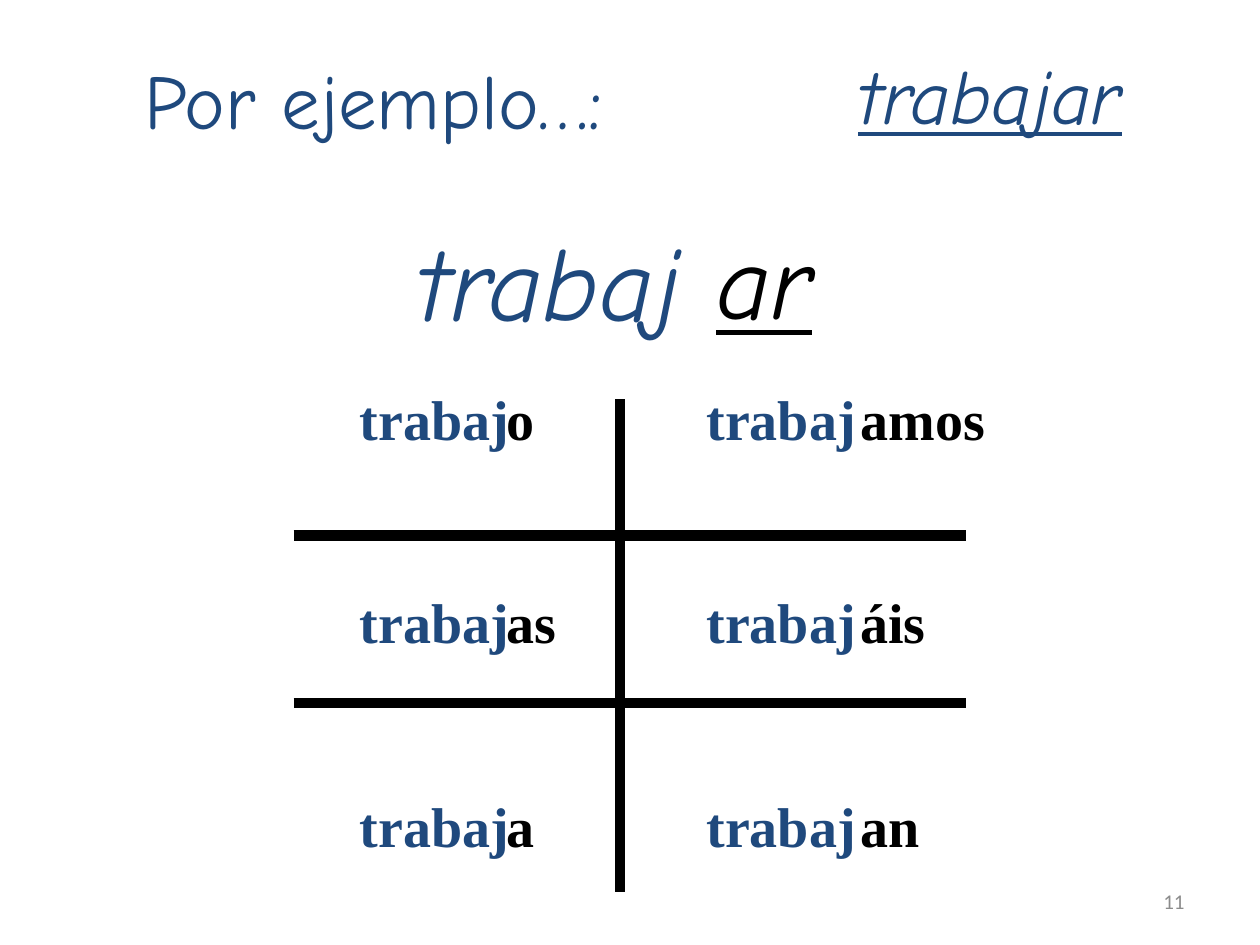
"""Build a slide that conjugates the Spanish verb trabajar in the present tense."""
from lxml.etree import SubElement
from pptx import Presentation
from pptx.dml.color import RGBColor
from pptx.enum.shapes import MSO_CONNECTOR
from pptx.enum.text import MSO_ANCHOR, MSO_AUTO_SIZE, PP_ALIGN
from pptx.oxml.ns import qn
from pptx.util import Inches, Pt

BLUE = RGBColor(0x1F, 0x49, 0x7D)
BLACK = RGBColor(0, 0, 0)
GRAY = RGBColor(0x8C, 0x8C, 0x8C)
HAND, SERIF, SANS = "Comic Neue", "Times New Roman", "Calibri"
LEFT, CENTER, RIGHT = PP_ALIGN.LEFT, PP_ALIGN.CENTER, PP_ALIGN.RIGHT

STEM = "trabaj"
HEADINGS = [
    ("Por ejemplo…:", (1.05, 0.37, 4.12, 0.83), dict(size=44, color=BLUE)),
    ("trabajar", (6.35, 0.33, 2.65, 0.84),
     dict(size=44, color=BLUE, italic=True, underline=True, align=RIGHT)),
    (STEM, (3, 1.67, 2.71, 1.11),
     dict(size=60, color=BLUE, italic=True, align=CENTER)),
    ("ar", (5.55, 1.65, 1.03, 1.1),
     dict(size=60, color=BLACK, italic=True, underline=True, align=CENTER)),
]
COLUMNS = [
    (["o", "as", "a"], (2.75, 3, 1.4, 3.87), (3.92, 3, 0.6, 3.83)),
    (["amos", "áis", "an"], (5.5, 3, 1.4, 3.87), (6.73, 3, 1.19, 3.83)),
]
GRID_LINES = [
    (4.92, 3.17, 4.92, 7.08),
    (2.33, 4.25, 7.67, 4.25),
    (2.33, 5.58, 7.67, 5.58),
]


def add_text(s, lines, box, size, color, font=HAND, bold=False, italic=False,
             underline=False, align=LEFT, gap=0, wrap=False,
             anchor=MSO_ANCHOR.TOP):
    sp = s.shapes.add_textbox(*map(Inches, box))
    tf = sp.text_frame
    tf.word_wrap = wrap
    tf.auto_size = MSO_AUTO_SIZE.NONE if wrap else MSO_AUTO_SIZE.SHAPE_TO_FIT_TEXT
    tf.vertical_anchor = anchor
    for i, line in enumerate(lines):
        p = tf.add_paragraph() if i else tf.paragraphs[0]
        p.alignment = align
        p.space_before = Pt(gap if i else 0)
        r = p.add_run()
        r.text = line
        f = r.font
        f.name, f.size, f.color.rgb = font, Pt(size), color
        f.bold, f.italic, f.underline = bold, italic, underline


def add_line(s, ends):
    line = s.shapes.add_connector(MSO_CONNECTOR.STRAIGHT, *map(Inches, ends))
    line.line.color.rgb = BLACK
    line.line.width = Pt(6)
    SubElement(line._element.spPr, qn("a:effectLst"))


def main():
    prs = Presentation()
    prs.slide_width, prs.slide_height = Inches(10), Inches(7.5)
    s = prs.slides.add_slide(prs.slide_layouts[6])
    add_text(s, ["11"], (7.17, 6.95, 2.33, 0.4), 12, GRAY, font=SANS,
             align=RIGHT, wrap=True, anchor=MSO_ANCHOR.MIDDLE)
    for text, box, style in HEADINGS:
        add_text(s, [text], box, **style)
    verb = dict(size=32, font=SERIF, bold=True, gap=78)
    for endings, stem_box, ending_box in COLUMNS:
        add_text(s, [STEM] * len(endings), stem_box, color=BLUE,
                 align=CENTER, **verb)
        add_text(s, endings, ending_box, color=BLACK, **verb)
    for ends in GRID_LINES:
        add_line(s, ends)
    prs.save("out.pptx")


if __name__ == "__main__":
    main()
